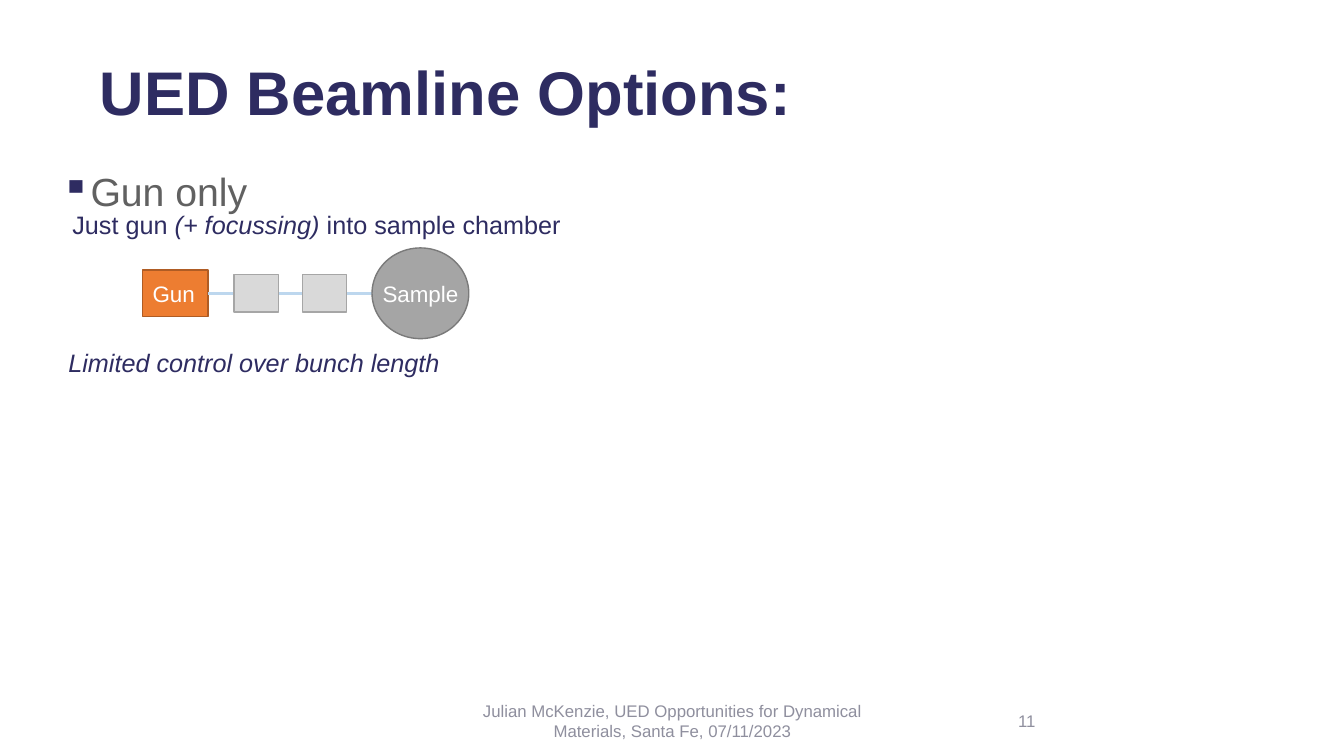
from lxml import etree
from pptx import Presentation
from pptx.dml.color import RGBColor
from pptx.enum.shapes import MSO_CONNECTOR, MSO_SHAPE
from pptx.enum.text import MSO_ANCHOR, PP_ALIGN
from pptx.oxml.ns import qn
from pptx.util import Inches, Pt

RECTANGLE, OVAL = MSO_SHAPE.RECTANGLE, MSO_SHAPE.OVAL
STRAIGHT = MSO_CONNECTOR.STRAIGHT
MIDDLE = MSO_ANCHOR.MIDDLE
LEFT, CENTER = PP_ALIGN.LEFT, PP_ALIGN.CENTER

COLORS = {
    "navy": "2E2C61", "bullet text": "616161", "footer": "8F8F9E", "white": "FFFFFF",
    "beam": "BDD7EE", "gun": "ED7D31", "gun edge": "AF5C24",
    "lens": "D9D9D9", "lens edge": "A6A6A6",
    "sample": "A5A5A5", "sample edge": "7A7A7A",
}
BEAM_Y = 2.91


def write(shape, runs, size, color, align=LEFT):
    """Fill the shape with one paragraph of (text, italic) runs."""
    paragraph = shape.text_frame.paragraphs[0]
    paragraph.alignment = align
    for text, italic in runs:
        run = paragraph.add_run()
        run.text = text
        run.font.name = "Arial"
        run.font.size = Pt(size)
        run.font.italic = italic
        run.font.color.rgb = RGBColor.from_string(COLORS[color])
    return paragraph


def add_element(kind, center_x, width, height, part):
    """Place a beamline element centred on the beam axis."""
    element = slide.shapes.add_shape(
        kind, Inches(center_x - width / 2), Inches(BEAM_Y - height / 2),
        Inches(width), Inches(height))
    element.shadow.inherit = False
    element.fill.solid()
    element.fill.fore_color.rgb = RGBColor.from_string(COLORS[part])
    element.line.color.rgb = RGBColor.from_string(COLORS[part + " edge"])
    element.line.width = Pt(1)
    element.text_frame.word_wrap = False
    return element


prs = Presentation()
prs.slide_width, prs.slide_height = Inches(13.33), Inches(7.5)
slide = prs.slides.add_slide(prs.slide_layouts[5])

title = slide.shapes.title
title.left, title.top = Inches(0.89), Inches(0.22)
title.width, title.height = Inches(11.5), Inches(1.45)
title.text_frame.vertical_anchor = MIDDLE
heading = write(title, [("UED Beamline Options:", False)], 44, "navy")
heading.line_spacing = 0.9
heading.runs[0].font.bold = True

# Beamline: gun, two lenses and the sample chamber along one beam
gun = add_element(RECTANGLE, 1.74, 0.65, 0.46, "gun")
write(gun, [("Gun", False)], 16, "white")

beam = slide.shapes.add_connector(
    STRAIGHT, Inches(2.07), Inches(BEAM_Y), Inches(3.69), Inches(BEAM_Y))
beam.begin_connect(gun, 3)
beam.line.color.rgb = RGBColor.from_string(COLORS["beam"])
beam.line.width = Pt(2.25)
etree.SubElement(beam._element.spPr, qn("a:effectLst"))

for lens_x in (2.54, 3.22):
    add_element(RECTANGLE, lens_x, 0.44, 0.37, "lens")

sample = add_element(OVAL, 4.17, 0.96, 0.9, "sample")
write(sample, [("Sample", False)], 16, "white", CENTER)

# Option name with its square bullet
option = slide.shapes.add_textbox(Inches(0.51), Inches(1.38), Inches(4.62), Inches(1.48))
option.text_frame.word_wrap = True
option.text_frame.margin_top = Inches(0.19)
properties = option.text_frame.paragraphs[0]._p.get_or_add_pPr()
properties.set("marL", str(Inches(0.25)))
properties.set("indent", str(Inches(-0.25)))
bullet_color = etree.SubElement(properties, qn("a:buClr"))
etree.SubElement(bullet_color, qn("a:srgbClr"), val=COLORS["navy"])
etree.SubElement(properties, qn("a:buChar"), char="▪")
write(option, [("Gun only", False)], 28, "bullet text").line_spacing = 1.2

# Remarks and footer: left, top, width, size, colour, alignment, anchor, runs
captions = [
    (0.62, 2.03, 5.24, 18, "navy", LEFT, MSO_ANCHOR.TOP,
     [("Just gun ", False), ("(+ focussing) ", True), ("into sample chamber", False)]),
    (0.58, 3.4, 5.6, 18, "navy", LEFT, MSO_ANCHOR.TOP,
     [("Limited control over bunch length", True)]),
    (4.42, 6.95, 4.5, 12, "footer", CENTER, MIDDLE,
     [("Julian McKenzie, UED Opportunities for Dynamical Materials, "
       "Santa Fe, 07/11/2023", False)]),
    (10, 6.95, 3, 12, "footer", LEFT, MIDDLE, [("11", False)]),
]
for left, top, width, size, color, align, anchor, runs in captions:
    caption = slide.shapes.add_textbox(
        Inches(left), Inches(top), Inches(width), Inches(0.4))
    caption.text_frame.word_wrap = True
    caption.text_frame.vertical_anchor = anchor
    write(caption, runs, size, color, align)

prs.save("out.pptx")
